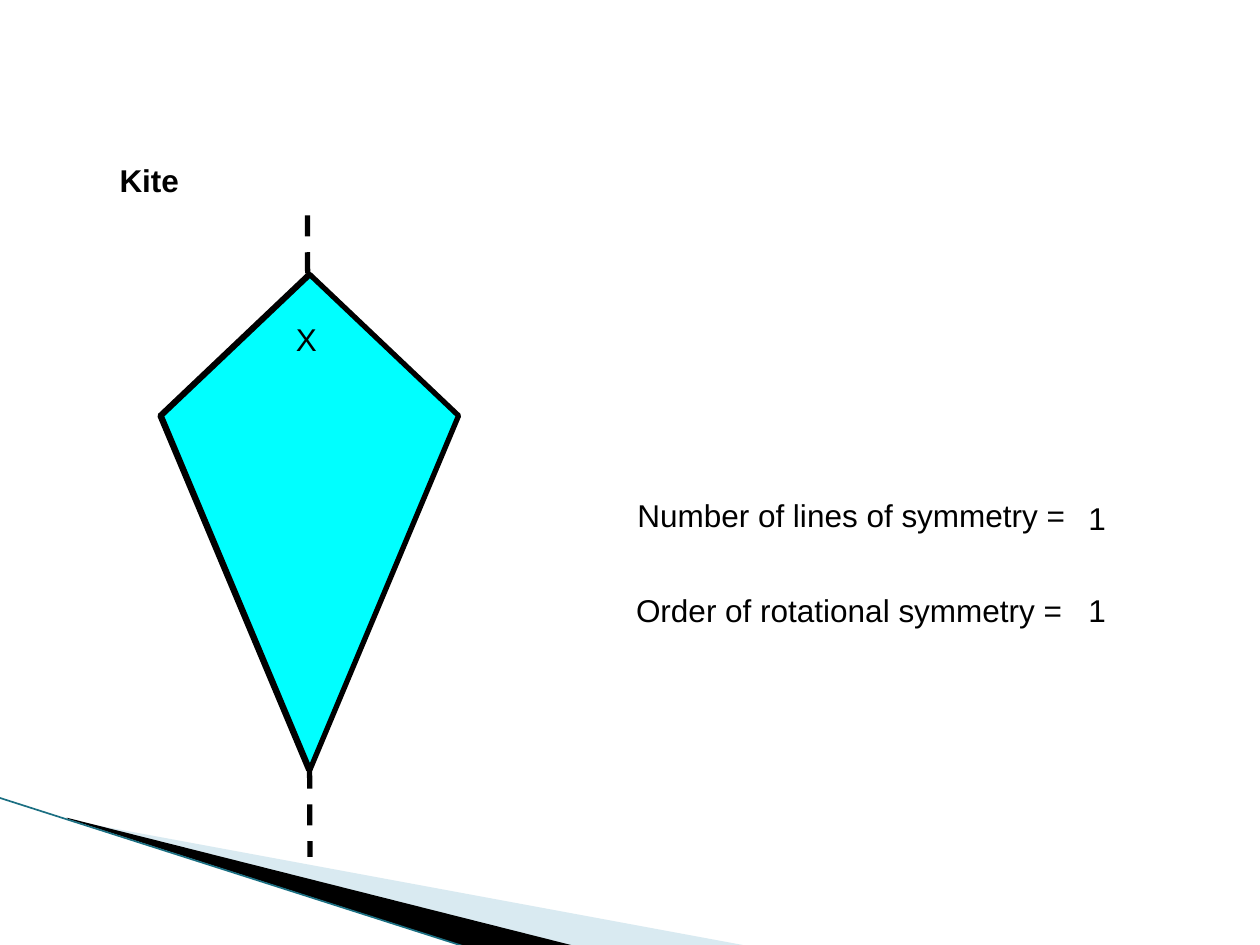
from lxml import etree
from pptx import Presentation
from pptx.dml.color import RGBColor
from pptx.enum.dml import MSO_LINE
from pptx.enum.shapes import MSO_CONNECTOR
from pptx.enum.text import MSO_AUTO_SIZE
from pptx.oxml.ns import qn
from pptx.util import Inches, Pt

DASH = MSO_LINE.DASH
STRAIGHT = MSO_CONNECTOR.STRAIGHT
FIT_SHAPE = MSO_AUTO_SIZE.SHAPE_TO_FIT_TEXT

BLACK = RGBColor(0x00, 0x00, 0x00)
CYAN = RGBColor(0x00, 0xFF, 0xFF)
PALE_BLUE = RGBColor(0xA0, 0xCB, 0xDC)
TEAL = RGBColor(0x1B, 0x6F, 0x82)

# Content: outlines and lines in inches
PALE_WEDGE = [(0.55, 6.51), (5.95, 7.51), (4.56, 7.51), (0.55, 6.5)]
DARK_WEDGE = [(0.53, 6.49), (4.57, 7.51), (3.72, 7.52), (0.54, 6.5)]
EDGE_LINE = [(-0.01, 6.33), (3.71, 7.52)]
KITE = [(1.27, 3.3), (2.45, 2.18), (3.63, 3.3), (2.45, 6.11)]
KITE_SHIFT = 0.01
SYMMETRY_LINE = [(2.44, 1.71), (2.46, 6.8)]

# Text, left, top, width
LABELS = [
    ("Number of lines of symmetry =", 4.96, 3.89, 3.92),
    ("1", 8.54, 3.91, 0.82),
    ("Order of rotational symmetry =", 4.95, 4.64, 3.64),
    ("1", 8.54, 4.64, 0.87),
]


def add_outline(slide, points, fill, line_width=None, alpha=None):
    corners = [(Inches(x), Inches(y)) for x, y in points]
    builder = slide.shapes.build_freeform(*corners[0])
    builder.add_line_segments(corners[1:], close=True)
    shape = builder.convert_to_shape()
    shape.shadow.inherit = False
    shape.fill.solid()
    shape.fill.fore_color.rgb = fill
    if alpha is not None:
        color = shape.fill._xPr.find(qn("a:solidFill"))[0]
        etree.SubElement(color, qn("a:alpha"), val=str(alpha * 1000))
    if line_width is None:
        shape.line.fill.background()
    else:
        shape.line.color.rgb = BLACK
        shape.line.width = Pt(line_width)


def add_line(slide, ends, color, width, dash=None):
    (x1, y1), (x2, y2) = ends
    line = slide.shapes.add_connector(
        STRAIGHT, Inches(x1), Inches(y1), Inches(x2), Inches(y2))
    line.line.color.rgb = color
    line.line.width = Pt(width)
    if dash is not None:
        line.line.dash_style = dash
    etree.SubElement(line._element.spPr, qn("a:effectLst"))


def add_text(slide, text, left, top, width, height=0.4, bold=False, wrap=True):
    box = slide.shapes.add_textbox(
        Inches(left), Inches(top), Inches(width), Inches(height))
    frame = box.text_frame
    frame.word_wrap = wrap
    frame.auto_size = FIT_SHAPE
    run = frame.paragraphs[0].add_run()
    run.text = text
    run.font.name = "Arial"
    run.font.size = Pt(18)
    run.font.bold = bold
    run.font.color.rgb = BLACK


def main():
    presentation = Presentation()
    presentation.slide_width = Inches(10)
    presentation.slide_height = Inches(7.5)
    slide = presentation.slides.add_slide(presentation.slide_layouts[6])

    # Corner decoration
    add_outline(slide, PALE_WEDGE, PALE_BLUE, alpha=40)
    add_outline(slide, DARK_WEDGE, BLACK)
    add_line(slide, EDGE_LINE, TEAL, 0.95)

    # Kite, its line of symmetry, and the marked kite on top
    add_outline(slide, KITE, CYAN, line_width=3)
    add_line(slide, SYMMETRY_LINE, BLACK, 3, DASH)
    marked_kite = [(x + KITE_SHIFT, y) for x, y in KITE]
    add_outline(slide, marked_kite, CYAN, line_width=3)
    add_text(slide, "X", 2.25, 2.49, 0.42, height=0.5, wrap=False)

    # Heading and answers
    add_text(slide, "Kite", 0.85, 1.23, 2.31, bold=True)
    for text, left, top, width in LABELS:
        add_text(slide, text, left, top, width)

    presentation.save("out.pptx")


if __name__ == "__main__":
    main()
